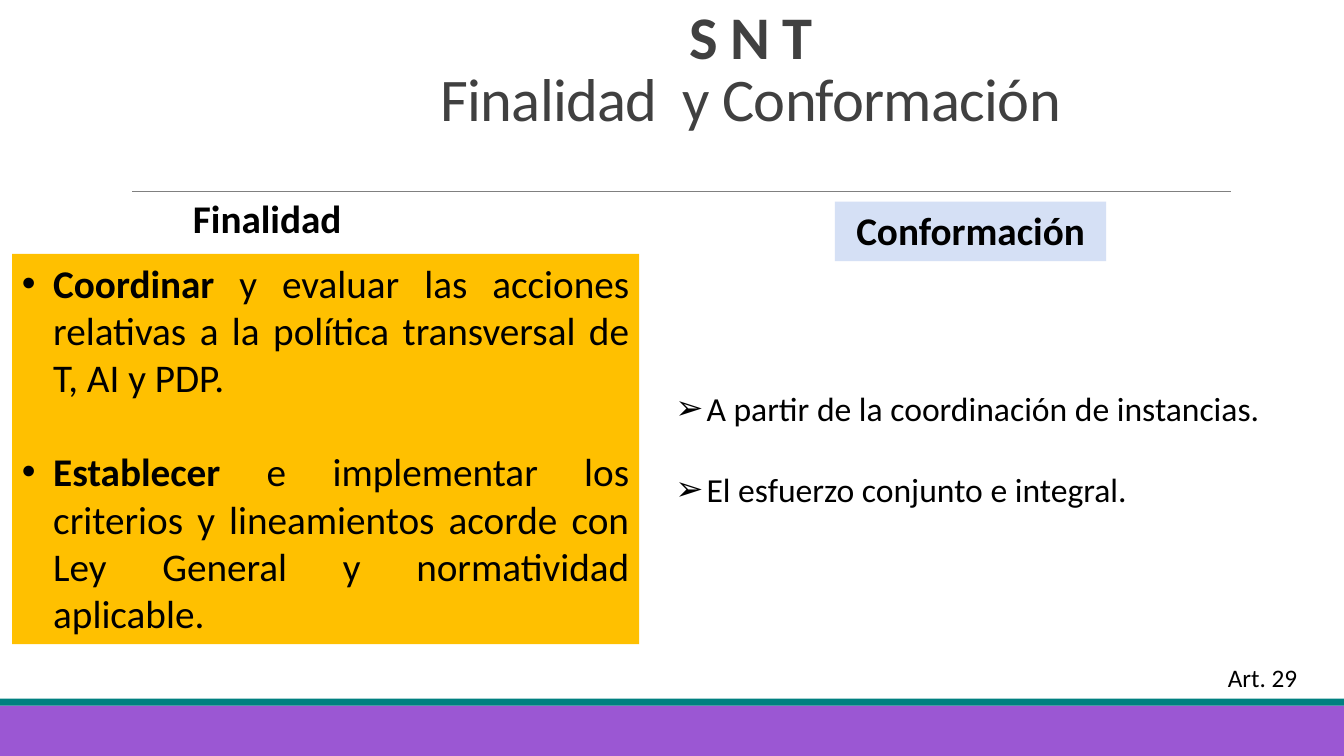
from lxml import etree
from pptx import Presentation
from pptx.dml.color import RGBColor
from pptx.enum.shapes import MSO_CONNECTOR, MSO_SHAPE
from pptx.enum.text import MSO_ANCHOR, MSO_AUTO_SIZE, PP_ALIGN
from pptx.oxml.ns import qn
from pptx.util import Inches, Pt

RECT = MSO_SHAPE.RECTANGLE
LINE = MSO_CONNECTOR.STRAIGHT
TOP, BOTTOM = MSO_ANCHOR.TOP, MSO_ANCHOR.BOTTOM
LEFT, MID, FULL = PP_ALIGN.LEFT, PP_ALIGN.CENTER, PP_ALIGN.JUSTIFY
FIXED = MSO_AUTO_SIZE.NONE

BLACK = RGBColor(0x00, 0x00, 0x00)
DARK = RGBColor(0x40, 0x40, 0x40)
GREY = RGBColor(0x80, 0x80, 0x80)
PURPLE = RGBColor(0x9B, 0x57, 0xD3)
TEAL = RGBColor(0x00, 0x80, 0x80)
GOLD = RGBColor(0xFF, 0xC0, 0x00)
BLUE = RGBColor(0x9B, 0xB4, 0xE9)

deck = Presentation()
deck.slide_width, deck.slide_height = Inches(13.33), Inches(7.5)
COL, ROW = deck.slide_width / 100, deck.slide_height / 100
slide = deck.slides.add_slide(deck.slide_layouts[5])
shapes = slide.shapes


def span(x, y, w, h):
    """Turn percent of the slide into left, top, width and height."""
    return int(x * COL), int(y * ROW), int(w * COL), int(h * ROW)


def write(shape, paras, size=28, color=BLACK, align=LEFT, anchor=TOP,
          mark=None, gap=0, lead=None, track=None):
    """Fill a shape with paragraphs, each a list of (text, bold) runs."""
    frame = shape.text_frame
    frame.word_wrap = True
    frame.auto_size = FIXED
    frame.vertical_anchor = anchor
    for i, runs in enumerate(paras):
        para = frame.add_paragraph() if i else frame.paragraphs[0]
        para.alignment = align
        if lead:
            para.line_spacing = lead
        if i:
            para.space_before = Pt(gap)
        if mark:
            props = para._p.get_or_add_pPr()
            props.set("marL", str(Inches(0.31)))
            props.set("indent", str(-Inches(0.31)))
            etree.SubElement(props, qn("a:buFont")).set("typeface", "Arial")
            etree.SubElement(props, qn("a:buChar")).set("char", mark)
        for text, bold in runs:
            for j, part in enumerate(text.split("\n")):
                if j:
                    para.add_line_break()
                if not part:
                    continue
                run = para.add_run()
                run.text = part
                font = run.font
                font.name, font.size, font.bold = "Calibri", Pt(size), bold
                font.color.rgb = color
                if track:
                    run._r.get_or_add_rPr().set("spc", str(int(track * 100)))


# Bands, then the panels that hold text
panels = []
for place, color in [
    ((0, 93.33, 100, 6.67), PURPLE),
    ((0, 92.4, 100, 0.93), TEAL),
    ((0.9, 33.6, 46.66, 51.6), GOLD),
    ((62.12, 26.67, 20.18, 7.87), BLUE),
]:
    panel = shapes.add_shape(RECT, *span(*place))
    panel.shadow.inherit = False
    panel.fill.solid()
    panel.fill.fore_color.rgb = color
    panel.line.fill.background()
    panels.append(panel)
goals, head = panels[2:]
tint = head._element.spPr.find(qn("a:solidFill"))[0]
etree.SubElement(tint, qn("a:alpha")).set("val", "41000")

x, y, w, h = span(9.83, 25.33, 81.77, 0)
rule = shapes.add_connector(LINE, x, y, x + w, y)
rule.line.color.rgb = GREY
rule.line.width = Pt(0.5)
etree.SubElement(rule._element.spPr, qn("a:effectLst"))

title = shapes.title
title.left, title.top, title.width, title.height = span(17.78, 6.53, 76.14, 11.87)
write(title, [[("S N T\n", True), ("Finalidad  y Conformación", False)]],
      size=43.2, color=DARK, align=MID, anchor=BOTTOM, lead=0.85, track=-0.5)

# Left: purpose
label = shapes.add_textbox(*span(13.13, 25.07, 13.5, 7.87))
write(label, [[("Finalidad", True)]], align=MID)
write(goals, [
    [("Coordinar ", True),
     ("y evaluar las acciones relativas a la política transversal de "
      "T, AI y PDP.", False)],
    [("Establecer", True),
     (" e implementar los criterios y lineamientos acorde con Ley General "
      "y normatividad aplicable.", False)],
], align=FULL, mark="•", gap=34)

# Right: make-up
write(head, [[("Conformación", True)]], align=MID)
points = shapes.add_textbox(*span(49.51, 50.67, 47.94, 17.47))
write(points, [
    [("A partir de la coordinación de instancias.", False)],
    [("El esfuerzo conjunto e integral.", False)],
], size=24, mark="➢", gap=29)

source = shapes.add_textbox(*span(90.62, 86.93, 7.95, 5.33))
write(source, [[("Art. 29", False)]], size=18)

deck.save("out.pptx")
